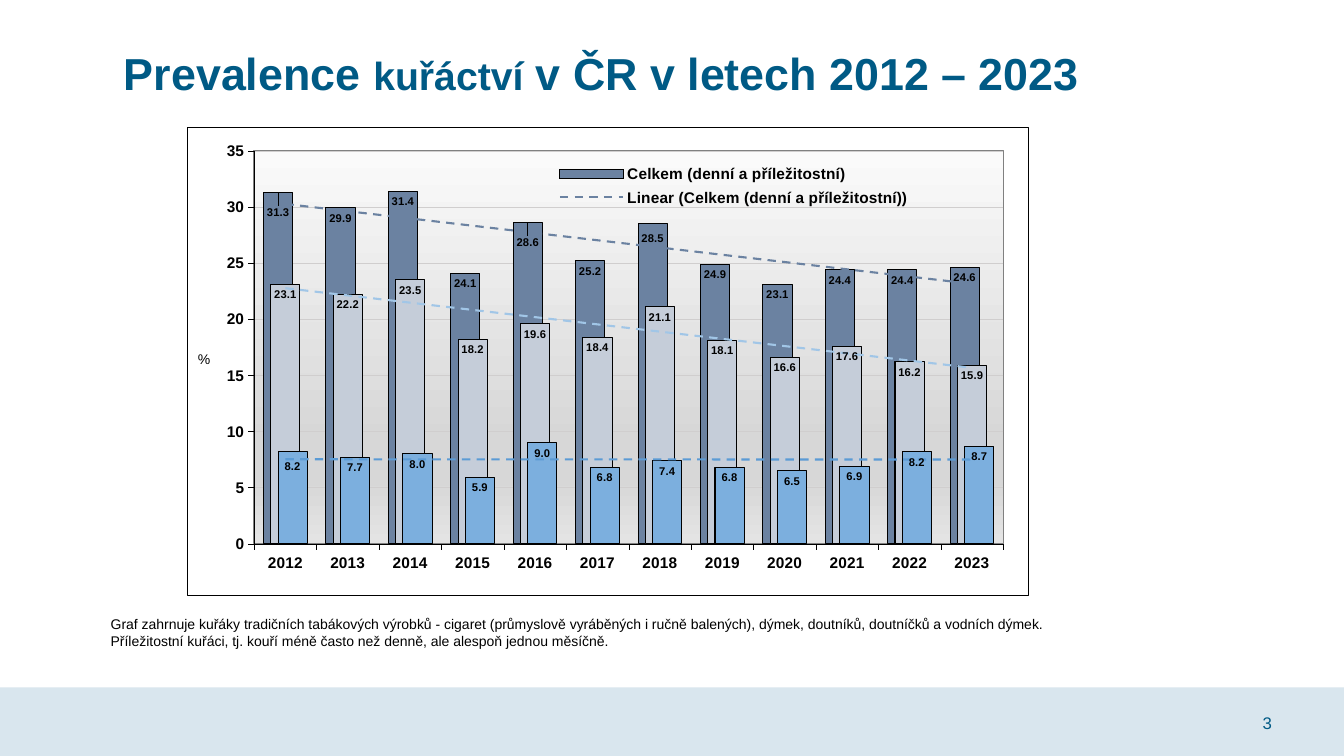
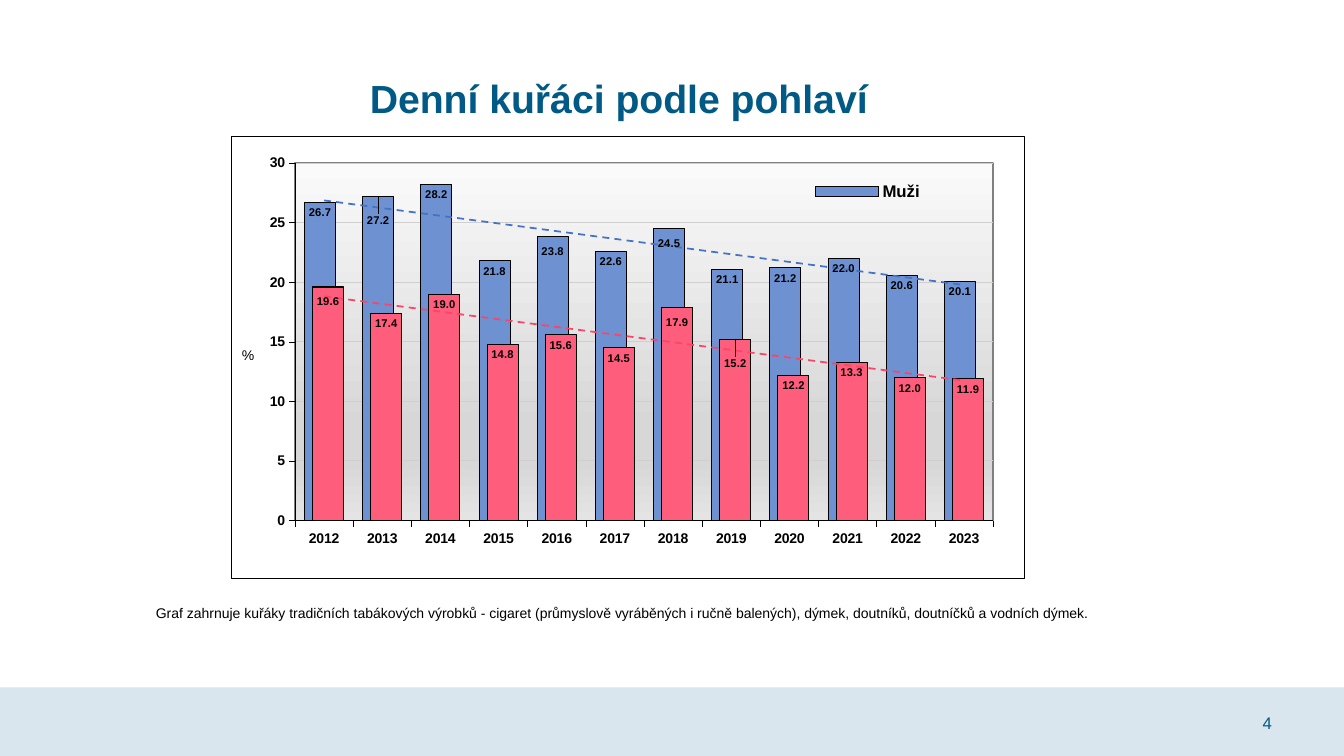
"""Build two slides on smoking prevalence, each with a column chart and trend lines."""
from copy import deepcopy
from dataclasses import dataclass

from pptx import Presentation
from pptx.chart.data import CategoryChartData
from pptx.dml.color import RGBColor
from pptx.enum.chart import XL_CHART_TYPE, XL_LABEL_POSITION, XL_LEGEND_POSITION, XL_TICK_MARK
from pptx.enum.shapes import MSO_SHAPE
from pptx.enum.text import MSO_ANCHOR, MSO_AUTO_SIZE, PP_ALIGN
from pptx.oxml import parse_xml
from pptx.oxml.ns import nsdecls
from pptx.util import Cm, Pt


@dataclass(frozen=True)
class Theme:
    font: str = "Arial"
    accent: str = "005A85"
    band: str = "D9E6EE"
    ink: str = "000000"
    paper: str = "FFFFFF"
    grid: str = "D0CECE"
    plot_edge: str = "808080"
    plot_stops: tuple = ((0, "FAFAFA"), (74, "D7D7D7"), (83, "D7D7D7"), (100, "E4E4E4"))
    title_large: int = 32
    title: int = 28
    number: int = 12
    note: int = 10
    label: int = 8


THEME = Theme()
WIDTH, HEIGHT = 33.87, 19.05
BAND_TOP = 17.32
YEARS = [str(year) for year in range(2012, 2024)]
COVERAGE = ("Graf zahrnuje kuřáky tradičních tabákových výrobků - cigaret (průmyslově vyráběných "
            "i ručně balených), dýmek, doutníků, doutníčků a vodních dýmek.")

SLIDES = [
    {
        "number": 3,
        "title": [("Prevalence ", THEME.title_large), ("kuřáctví", THEME.title),
                  (" v\u00a0ČR v\u00a0letech 2012 – 2023".replace("\u00a0", chr(160)), THEME.title_large)],
        "title_box": (2.87, 1.17, 24.89, 1.5),
        "align": PP_ALIGN.LEFT,
        "notes": [COVERAGE,
                  "Příležitostní kuřáci, tj. kouří méně často než denně, ale alespoň jednou měsíčně."],
        "note_box": (2.54, 15.39, 26.8, 1.55),
        "chart": {
            "box": (4.7, 3.2, 21.23, 11.81),
            "size": 11, "legend_size": 11, "maximum": 35, "gap": 64, "overlap": 75,
            "grid_width": 0.25, "border_width": 0.5, "trend_width": 1.5,
            "plot": (0.08, 0.05, 0.89, 0.84),
            "legend": (0.43, 0.07, 0.44, 0.11),
            "axis_title": (0.01, 0.47),
            "series": [
                {"name": "Celkem (denní a příležitostní)", "fill": "6B82A1", "trend": "6B82A1",
                 "values": [31.3, 29.9, 31.4, 24.1, 28.6, 25.2, 28.5, 24.9, 23.1, 24.4, 24.4, 24.6],
                 "shifts": {0: 0.02, 4: 0.02, 6: 0.01}},
                {"name": "Denní", "fill": "C5CDD9", "trend": "A1C6E7",
                 "values": [23.1, 22.2, 23.5, 18.2, 19.6, 18.4, 21.1, 18.1, 16.6, 17.6, 16.2, 15.9],
                 "shifts": {}},
                {"name": "Příležitostní", "fill": "7CAFDE", "trend": "5B9BD5",
                 "values": [8.2, 7.7, 8, 5.9, 9, 6.8, 7.4, 6.8, 6.5, 6.9, 8.2, 8.7],
                 "shifts": {0: 0.01}},
            ],
        },
    },
    {
        "number": 4,
        "title": [("Denní kuřáci podle pohlaví", THEME.title)],
        "title_box": (6.91, 1.63, 17.37, 1.8),
        "align": PP_ALIGN.CENTER,
        "notes": [COVERAGE],
        "note_box": (3.68, 15.11, 30.18, 0.69),
        "chart": {
            "box": (5.82, 3.43, 20.02, 11.15),
            "size": 10, "legend_size": 12, "maximum": 30, "gap": 62, "overlap": 74,
            "grid_width": 0.75, "border_width": 0.75, "trend_width": 1.25,
            "plot": (0.08, 0.06, 0.88, 0.81),
            "legend": (0.73, 0.09, 0.16, 0.07),
            "axis_title": (0.01, 0.47),
            "series": [
                {"name": "Muži", "fill": "6D91D1", "trend": "4472C4",
                 "values": [26.7, 27.2, 28.2, 21.8, 23.8, 22.6, 24.5, 21.1, 21.2, 22, 20.6, 20.1],
                 "shifts": {1: 0.03, 4: 0.01, 6: 0.01}},
                {"name": "Ženy", "fill": "FF5D7C", "trend": "FF4367",
                 "values": [19.6, 17.4, 19, 14.8, 15.6, 14.5, 17.9, 15.2, 12.2, 13.3, 12, 11.9],
                 "shifts": {0: 0.01, 6: 0.01, 7: 0.03}},
            ],
        },
    },
]


def rgb(value):
    return RGBColor.from_string(value)


def style_font(font, size, color=THEME.ink, bold=False):
    font.name, font.size, font.bold = THEME.font, Pt(size), bold
    font.color.rgb = rgb(color)


def style_line(line, color, width):
    line.color.rgb = rgb(color)
    line.width = Pt(width)


def add_span(para, text, **style):
    span = para.add_run()
    span.text = text
    style_font(span.font, **style)


def add_text(page, box, lines, anchor=MSO_ANCHOR.TOP, **style):
    frame = page.shapes.add_textbox(*map(Cm, box)).text_frame
    frame.word_wrap, frame.vertical_anchor = True, anchor
    for index, line in enumerate(lines):
        para = frame.add_paragraph() if index else frame.paragraphs[0]
        add_span(para, line, **style)


def chart_xml(tag, inner):
    return parse_xml(f"<c:{tag} {nsdecls('c', 'a')}>{inner}</c:{tag}>")


def solid(color):
    return f'<a:solidFill><a:srgbClr val="{color}"/></a:solidFill>'


def outline(color, width, dash="solid"):
    return f'<a:ln w="{int(Pt(width))}">{solid(color)}<a:prstDash val="{dash}"/></a:ln>'


def layout_xml(position, inner=False):
    target = '<c:layoutTarget val="inner"/>' if inner else ""
    modes = "".join(f'<c:{axis}Mode val="edge"/>' for axis in "xy")
    places = "".join(f'<c:{key} val="{value}"/>' for key, value in zip("xywh", position))
    return chart_xml("layout", f"<c:manualLayout>{target}{modes}{places}</c:manualLayout>")


def set_layout(following, position, inner=False):
    parent = following.getparent()
    for old in parent.xpath("./c:layout"):
        parent.remove(old)
    following.addprevious(layout_xml(position, inner))


def shift_labels(group, shifts):
    for order, (index, shift) in enumerate(shifts.items()):
        label = chart_xml("dLbl", f'<c:idx val="{index}"/><c:layout><c:manualLayout>'
                                  f'<c:x val="0"/><c:y val="{shift}"/></c:manualLayout></c:layout>')
        for child in group:
            if not child.tag.endswith(("}dLbl", "}showLeaderLines")):
                label.append(deepcopy(child))
        group.insert(order, label)


def format_series(series, element, content, trend_width):
    series.format.fill.solid()
    series.format.fill.fore_color.rgb = rgb(content["fill"])
    style_line(series.format.line, THEME.ink, 0.75)
    series.invert_if_negative = False
    labels = series.data_labels
    labels.show_value = True
    labels.number_format, labels.number_format_is_linked = "0.0", False
    labels.position = XL_LABEL_POSITION.INSIDE_END
    style_font(labels.font, THEME.label, bold=True)
    shift_labels(element.xpath("./c:dLbls")[0], content["shifts"])
    trend = chart_xml("trendline",
                      f'<c:spPr>{outline(content["trend"], trend_width, "dash")}</c:spPr>'
                      '<c:trendlineType val="linear"/><c:dispRSqr val="0"/><c:dispEq val="0"/>')
    element.xpath("./c:cat")[0].addprevious(trend)


def format_axes(chart, content):
    for axis in (chart.category_axis, chart.value_axis):
        axis.major_tick_mark, axis.minor_tick_mark = XL_TICK_MARK.OUTSIDE, XL_TICK_MARK.NONE
        style_line(axis.format.line, THEME.ink, 0.25)
        style_font(axis.tick_labels.font, content["size"], bold=True)
    axis = chart.value_axis
    axis.minimum_scale, axis.maximum_scale, axis.major_unit = 0, content["maximum"], 5
    axis.tick_labels.number_format, axis.tick_labels.number_format_is_linked = "0", False
    style_line(axis.major_gridlines.format.line, THEME.grid, content["grid_width"])
    add_span(axis.axis_title.text_frame.paragraphs[0], "%", size=THEME.note)
    title = chart.element.xpath(".//c:valAx/c:title")[0]
    body = title.xpath(".//a:bodyPr")[0]
    body.set("rot", "0")
    body.set("vert", "horz")
    set_layout(title.xpath("./c:overlay")[0], content["axis_title"])


def format_legend(chart, content):
    chart.has_legend = True
    legend = chart.legend
    legend.position, legend.include_in_layout = XL_LEGEND_POSITION.RIGHT, False
    style_font(legend.font, content["legend_size"], bold=True)
    overlay = chart.element.xpath(".//c:legend/c:overlay")[0]
    set_layout(overlay, content["legend"])
    count = len(content["series"])
    layout = chart.element.xpath(".//c:legend/c:layout")[0]
    for index in range(count, 2 * count):
        layout.addprevious(chart_xml("legendEntry", f'<c:idx val="{index}"/><c:delete val="1"/>'))


def format_areas(chart, content):
    plot_area = chart.element.xpath(".//c:plotArea")[0]
    set_layout(plot_area.xpath("./c:barChart")[0], content["plot"], inner=True)
    stops = "".join(f'<a:gs pos="{place * 1000}"><a:srgbClr val="{color}"/></a:gs>'
                    for place, color in THEME.plot_stops)
    plot_area.append(chart_xml("spPr", f'<a:gradFill><a:gsLst>{stops}</a:gsLst>'
                                       '<a:lin ang="5400000" scaled="0"/></a:gradFill>'
                                       + outline(THEME.plot_edge, 1)))
    frame = chart_xml("spPr", solid(THEME.paper) + outline(THEME.ink, content["border_width"]))
    chart.element.xpath("./c:chart")[0].addnext(frame)


def add_column_chart(page, content):
    data = CategoryChartData()
    data.categories = YEARS
    for item in content["series"]:
        data.add_series(item["name"], item["values"])
    chart = page.shapes.add_chart(XL_CHART_TYPE.COLUMN_CLUSTERED,
                                  *map(Cm, content["box"]), data).chart
    chart.has_title = False
    style_font(chart.font, content["size"])
    plot = chart.plots[0]
    plot.gap_width, plot.overlap, plot.vary_by_categories = content["gap"], content["overlap"], False
    elements = chart.element.xpath(".//c:ser")
    for series, element, item in zip(plot.series, elements, content["series"]):
        format_series(series, element, item, content["trend_width"])
    format_axes(chart, content)
    format_legend(chart, content)
    format_areas(chart, content)


def set_title(page, content):
    title = page.shapes.title
    title.left, title.top, title.width, title.height = map(Cm, content["title_box"])
    frame = title.text_frame
    frame.auto_size, frame.vertical_anchor = MSO_AUTO_SIZE.NONE, MSO_ANCHOR.MIDDLE
    para = frame.paragraphs[0]
    para.alignment, para.line_spacing = content["align"], 0.9
    for text, size in content["title"]:
        add_span(para, text, size=size, color=THEME.accent, bold=True)


def move_band_to_master(deck, page):
    band = page.shapes.add_shape(MSO_SHAPE.RECTANGLE, 0, Cm(BAND_TOP),
                                 Cm(WIDTH), Cm(HEIGHT - BAND_TOP))
    band.shadow.inherit = False
    band.fill.solid()
    band.fill.fore_color.rgb = rgb(THEME.band)
    band.line.fill.background()
    band.element.xpath(".//p:cNvPr")[0].set("id", "99")
    deck.slide_master.shapes.element.insert(2, band.element)


def main():
    deck = Presentation()
    deck.slide_width, deck.slide_height = Cm(WIDTH), Cm(HEIGHT)
    for content in SLIDES:
        page = deck.slides.add_slide(deck.slide_layouts[5])
        set_title(page, content)
        add_column_chart(page, content["chart"])
        add_text(page, content["note_box"], content["notes"], size=THEME.note)
        add_text(page, (31.57, 17.7, 1.17, 1.02), [str(content["number"])],
                 anchor=MSO_ANCHOR.MIDDLE, size=THEME.number, color=THEME.accent)
    move_band_to_master(deck, deck.slides[0])
    deck.save("out.pptx")


if __name__ == "__main__":
    main()
